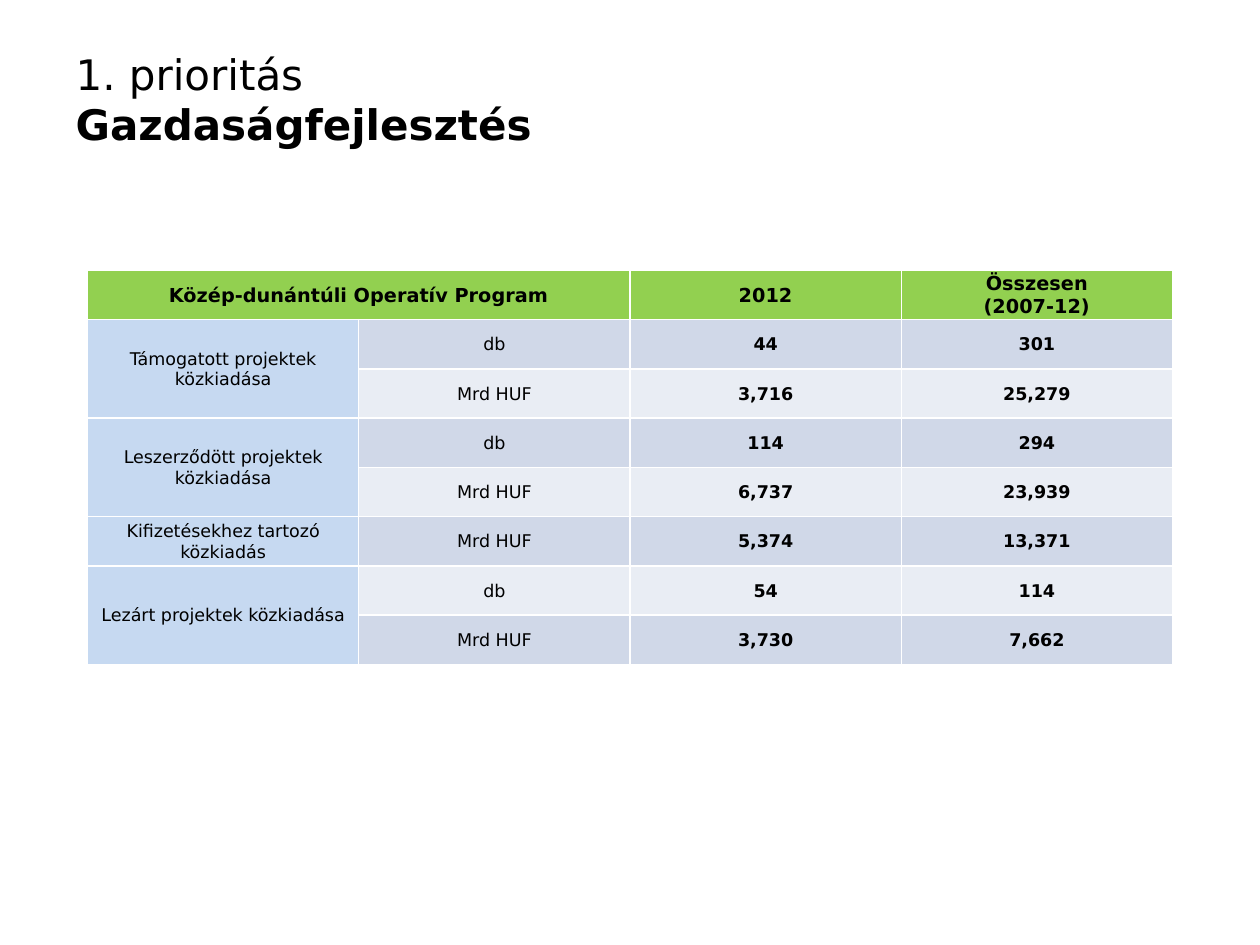
from lxml.etree import SubElement
from pptx import Presentation
from pptx.dml.color import RGBColor
from pptx.enum.text import MSO_ANCHOR, PP_ALIGN
from pptx.oxml.ns import qn
from pptx.util import Pt

FONT = "DejaVu Sans"
COLORS = {"text": "000000", "border": "FFFFFF", "header": "92D050",
          "label": "C6D9F1", "dark": "D0D8E8", "light": "E9EDF4"}

TITLE = ("1. prioritás", "Gazdaságfejlesztés")
HEADER = ("Közép-dunántúli Operatív Program", "", "2012", "Összesen\n(2007-12)")
GROUPS = [
    ("Támogatott projektek közkiadása",
     [("db", "44", "301"), ("Mrd HUF", "3,716", "25,279")]),
    ("Leszerződött projektek közkiadása",
     [("db", "114", "294"), ("Mrd HUF", "6,737", "23,939")]),
    ("Kifizetésekhez tartozó közkiadás",
     [("Mrd HUF", "5,374", "13,371")]),
    ("Lezárt projektek közkiadása",
     [("db", "54", "114"), ("Mrd HUF", "3,730", "7,662")]),
]
TABLE_LEFT, TABLE_TOP = 50, 154.5
COLUMN_WIDTH, ROW_HEIGHT = 155, 28.17


def style_font(font, size, bold):
    font.name = FONT
    font.size = Pt(size)
    font.bold = bold
    font.color.rgb = RGBColor.from_string(COLORS["text"])


def fill_cell(cell, text, fill, size=10, bold=False):
    cell.margin_left = cell.margin_right = cell.margin_top = Pt(0.7)
    cell.margin_bottom = Pt(0)
    cell.vertical_anchor = MSO_ANCHOR.MIDDLE
    cell.text_frame.text = text
    for paragraph in cell.text_frame.paragraphs:
        paragraph.alignment = PP_ALIGN.CENTER
        for run in paragraph.runs:
            style_font(run.font, size, bold)
    # Borders precede the fill in the cell properties
    properties = cell._tc.get_or_add_tcPr()
    for side in ("a:lnL", "a:lnR", "a:lnT", "a:lnB"):
        line = SubElement(properties, qn(side), w=str(Pt(1)))
        solid = SubElement(line, qn("a:solidFill"))
        SubElement(solid, qn("a:srgbClr"), val=COLORS["border"])
    cell.fill.solid()
    cell.fill.fore_color.rgb = RGBColor.from_string(COLORS[fill])


presentation = Presentation()
presentation.slide_width, presentation.slide_height = Pt(720), Pt(540)
slide = presentation.slides.add_slide(presentation.slide_layouts[5])

# Title
title = slide.shapes.title
title.left, title.top, title.width, title.height = Pt(36), Pt(21.6), Pt(648), Pt(90)
frame = title.text_frame
frame.text = "\v".join(TITLE)
frame.vertical_anchor = MSO_ANCHOR.TOP
frame.margin_top = Pt(6)
frame.paragraphs[0].alignment = PP_ALIGN.LEFT
for run, bold in zip(frame.paragraphs[0].runs, (False, True)):
    style_font(run.font, 24, bold)

# Table
row_count = 1 + sum(len(rows) for _, rows in GROUPS)
table = slide.shapes.add_table(
    row_count, len(HEADER), Pt(TABLE_LEFT), Pt(TABLE_TOP),
    Pt(COLUMN_WIDTH * len(HEADER)), Pt(ROW_HEIGHT * row_count)).table
for column in table.columns:
    column.width = Pt(COLUMN_WIDTH)
for row in table.rows:
    row.height = Pt(ROW_HEIGHT)

# Header row
for index, text in enumerate(HEADER):
    fill_cell(table.cell(0, index), text, "header", size=11, bold=True)
table.cell(0, 0).merge(table.cell(0, 1))

# Body rows, banded, with one label cell per group
row_index = 1
for label, rows in GROUPS:
    first = row_index
    for values in rows:
        fill_cell(table.cell(row_index, 0), label if row_index == first else "", "label")
        band = "dark" if row_index % 2 else "light"
        for index, text in enumerate(values, start=1):
            fill_cell(table.cell(row_index, index), text, band, bold=index > 1)
        row_index += 1
    if len(rows) > 1:
        table.cell(first, 0).merge(table.cell(row_index - 1, 0))

presentation.save("out.pptx")
